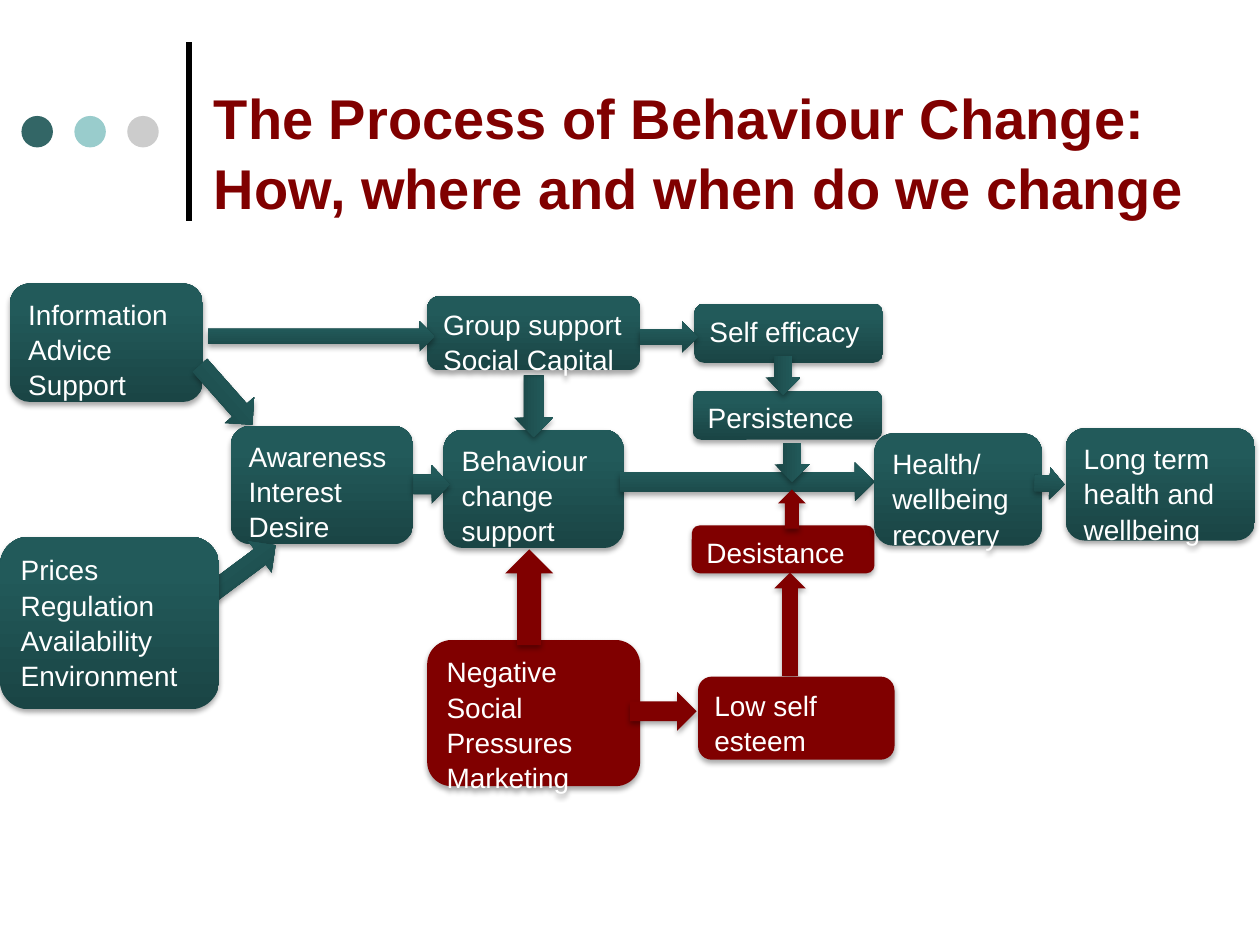
"""Build a one-slide flow diagram of the process of behaviour change."""
from copy import deepcopy
from dataclasses import dataclass

from lxml.etree import SubElement
from pptx import Presentation
from pptx.dml.color import RGBColor
from pptx.enum.shapes import MSO_CONNECTOR, MSO_SHAPE
from pptx.enum.text import MSO_ANCHOR, PP_ALIGN
from pptx.oxml.ns import qn
from pptx.util import Inches, Pt


@dataclass(frozen=True)
class Theme:
    font: str = "Arial"
    title_size: int = 32
    label_size: int = 16
    line_spacing: float = 1.05
    black: str = "000000"
    white: str = "FFFFFF"
    maroon: str = "800000"
    dots: tuple = ("336666", "99CCCC", "CCCCCC")
    teal_stops: tuple = ((0, "1A4545"), (0.8, "225A5A"), (1, "215B5B"))


theme = Theme()


def write(frame, text, size, color, bold=False, anchor=MSO_ANCHOR.TOP):
    frame.word_wrap = True
    frame.vertical_anchor = anchor
    frame.text = text
    for paragraph in frame.paragraphs:
        paragraph.alignment = PP_ALIGN.LEFT
        paragraph.line_spacing = theme.line_spacing
        paragraph.font.name = theme.font
        paragraph.font.size = Pt(size)
        paragraph.font.bold = bold
        paragraph.font.color.rgb = RGBColor.from_string(color)


def paint(shape, tone):
    shape.line.fill.background()
    shape.shadow.inherit = False
    properties = shape._element.spPr
    if tone == "teal":
        shape.fill.gradient()
        shape.fill.gradient_angle = 90
        stop_list = properties.find(qn("a:gradFill")).find(qn("a:gsLst"))
        stop_list.append(deepcopy(stop_list[-1]))
        for stop, (position, color) in zip(shape.fill.gradient_stops, theme.teal_stops):
            stop.position = position
            stop.color.rgb = RGBColor.from_string(color)
    else:
        shape.fill.solid()
        shape.fill.fore_color.rgb = RGBColor.from_string(theme.maroon)
    shadow = SubElement(properties.find(qn("a:effectLst")), qn("a:outerShdw"),
                        blurRad="40000", dist="23000", dir="5400000", rotWithShape="0")
    shade = SubElement(shadow, qn("a:srgbClr"), val=theme.black)
    SubElement(shade, qn("a:alpha"), val="35000")


presentation = Presentation()
presentation.slide_width = Inches(10)
presentation.slide_height = Inches(7.5)
slide = presentation.slides.add_slide(presentation.slide_layouts[6])

divider = slide.shapes.add_connector(
    MSO_CONNECTOR.STRAIGHT, Inches(1.5), Inches(1.75), Inches(1.5), Inches(0.33))
divider.line.color.rgb = RGBColor.from_string(theme.black)
divider.line.width = Pt(3)
SubElement(divider._element.spPr, qn("a:effectLst"))

for index, color in enumerate(theme.dots):
    dot = slide.shapes.add_shape(
        MSO_SHAPE.OVAL, Inches(0.17 + 0.42 * index), Inches(0.92), Inches(0.25), Inches(0.25))
    dot.shadow.inherit = False
    dot.fill.solid()
    dot.fill.fore_color.rgb = RGBColor.from_string(color)
    dot.line.fill.background()

title = slide.shapes.add_textbox(Inches(1.6), Inches(0.36), Inches(8.33), Inches(1.67))
write(title.text_frame, "The Process of Behaviour Change:\vHow, where and when do we change",
      theme.title_size, theme.maroon, bold=True, anchor=MSO_ANCHOR.MIDDLE)

steps = [
    ("teal", 0.08, 2.25, 1.53, 0.94, 0, "Information Advice\nSupport"),
    ("teal", 1.48, 2.98, 0.63, 0.31, 48.5, ""),
    ("teal", 1.83, 3.38, 1.45, 0.94, 0, "Awareness\nInterest\nDesire"),
    ("teal", 1.62, 4.36, 0.63, 0.31, 323.3, ""),
    ("teal", 3.52, 3.41, 1.43, 0.94, 0, "Behaviour change support"),
    ("teal", 8.46, 3.4, 1.5, 0.89, 0, "Long term health and wellbeing"),
    ("teal", 3.99, 3.07, 0.49, 0.31, 90, ""),
    ("teal", 3.28, 3.69, 0.29, 0.31, 0, ""),
    ("teal", 4.92, 3.67, 2.02, 0.31, 0, ""),
    ("maroon", 5.49, 4.17, 1.45, 0.38, 0, "Desistance"),
    ("teal", 0, 4.26, 1.74, 1.37, 0, "Prices\nRegulation\nAvailability\nEnvironment"),
    ("maroon", 3.39, 5.08, 1.69, 1.16, 0, "Negative Social Pressures Marketing"),
    ("maroon", 6.13, 3.93, 0.31, 0.22, 270, ""),
    ("maroon", 5.86, 4.83, 0.82, 0.25, 270, ""),
    ("teal", 3.39, 2.35, 1.69, 0.59, 0, "Group support\nSocial Capital"),
    ("maroon", 5, 5.49, 0.53, 0.31, 0, ""),
    ("maroon", 3.82, 4.55, 0.76, 0.38, 270, ""),
    ("teal", 5.51, 2.41, 1.5, 0.47, 0, "Self efficacy"),
    ("teal", 5.5, 3.1, 1.5, 0.39, 0, "Persistence"),
    ("teal", 5.08, 2.55, 0.46, 0.25, 0, ""),
    ("teal", 6.06, 2.84, 0.31, 0.28, 90, ""),
    ("maroon", 5.54, 5.37, 1.56, 0.66, 0, "Low self esteem"),
    ("teal", 6.13, 3.53, 0.31, 0.28, 90, ""),
    ("teal", 6.94, 3.44, 1.33, 0.89, 0, "Health/ wellbeing recovery"),
    ("teal", 8.21, 3.71, 0.24, 0.26, 2.7, ""),
    ("teal", 1.65, 2.55, 1.8, 0.24, 0, ""),
]
for tone, left, top, width, height, turn, label in steps:
    outline = MSO_SHAPE.FLOWCHART_ALTERNATE_PROCESS if label else MSO_SHAPE.RIGHT_ARROW
    step = slide.shapes.add_shape(
        outline, Inches(left), Inches(top), Inches(width), Inches(height))
    step.rotation = turn
    paint(step, tone)
    if label:
        write(step.text_frame, label, theme.label_size, theme.white)

presentation.save("out.pptx")
